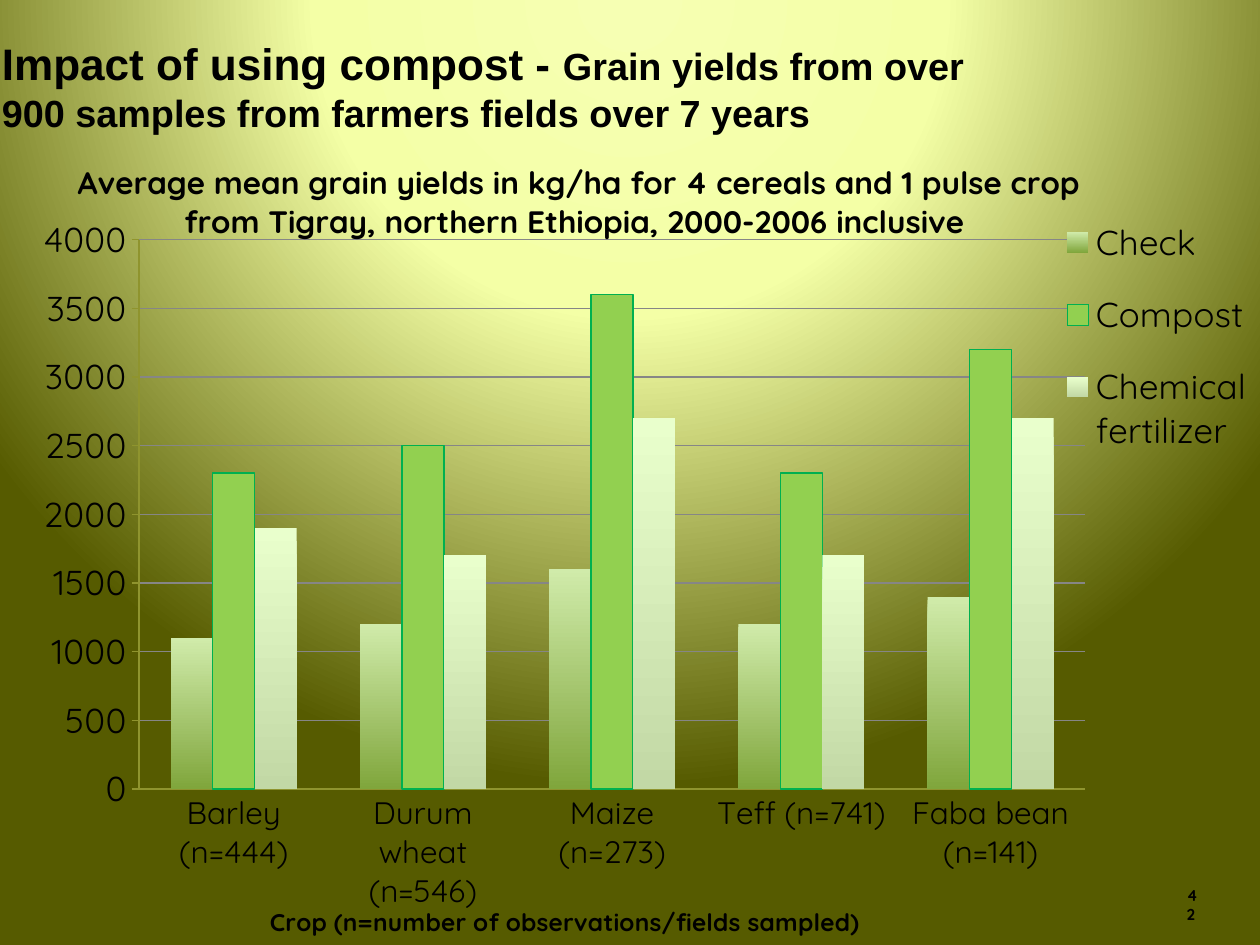
import pptx
import pptx.chart.data
import pptx.dml.color
import pptx.enum.chart
import pptx.enum.text
import pptx.oxml
import pptx.oxml.ns
import pptx.util

Pt = pptx.util.Pt


def color(value):
    return pptx.dml.color.RGBColor.from_string(value)


def write(para, text, size=18, font="Quicksand", bold=True):
    span = para.add_run()
    span.text = text
    span.font.size = Pt(size)
    span.font.name = font
    span.font.bold = bold
    span.font.color.rgb = color("000000")


deck = pptx.Presentation()
deck.slide_width, deck.slide_height = Pt(720), Pt(540)
page = deck.slides.add_slide(deck.slide_layouts[6])

page.background.fill.solid()
solid = page.background._cSld.find(".//" + pptx.oxml.ns.qn("a:solidFill"))
stops = "".join(
    f'<a:gs pos="{place * 1000}"><a:srgbClr val="{value}"/></a:gs>'
    for place, value in [(0, "F6FFB3"), (40, "F4FFA6"), (100, "565B00")]
)
gradient = pptx.oxml.parse_xml(
    f'<a:gradFill {pptx.oxml.ns.nsdecls("a")} rotWithShape="1"><a:gsLst>{stops}</a:gsLst>'
    '<a:path path="circle"><a:fillToRect l="50000" t="-80000" r="50000" b="180000"/></a:path>'
    "</a:gradFill>"
)
solid.getparent().replace(solid, gradient)

number_box = page.shapes.add_textbox(Pt(671), Pt(502.5), Pt(24), Pt(29))
number_box.text_frame.word_wrap = True
write(number_box.text_frame.paragraphs[0], "42", size=9)

title_box = page.shapes.add_textbox(Pt(-6), Pt(17.5), Pt(600), Pt(54))
title_box.text_frame.word_wrap = True
title_box.text_frame.vertical_anchor = pptx.enum.text.MSO_ANCHOR.TOP
para = title_box.text_frame.paragraphs[0]
write(para, "Impact of using compost - ", size=25.2, font="Arial")
write(para, "Grain yields from over 900 samples from farmers fields over 7 years", size=21.6, font="Arial")

yields = pptx.chart.data.CategoryChartData()
yields.categories = ["Barley (n=444)", "Durum wheat (n=546)", "Maize (n=273)", "Teff (n=741)", "Faba bean (n=141)"]
yields.add_series("Check", [1100, 1200, 1600, 1200, 1400])
yields.add_series("Compost", [2300, 2500, 3600, 2300, 3200])
yields.add_series("Chemical fertilizer", [1900, 1700, 2700, 1700, 2700])
chart = page.shapes.add_chart(
    pptx.enum.chart.XL_CHART_TYPE.COLUMN_CLUSTERED, Pt(-48), Pt(72), Pt(768), Pt(468), yields
).chart
chart.font.size = Pt(10)
chart.font.name = "Quicksand"
chart.font.color.rgb = color("000000")

chart.has_title = True
write(
    chart.chart_title.text_frame.paragraphs[0],
    "Average mean grain yields in kg/ha for 4 cereals and 1 pulse crop from Tigray, northern Ethiopia, 2000-2006 inclusive ",
)

crops, amounts = chart.category_axis, chart.value_axis
crops.has_title = True
write(crops.axis_title.text_frame.paragraphs[0], "Crop (n=number of observations/fields sampled)", size=14)
crops.major_tick_mark = pptx.enum.chart.XL_TICK_MARK.NONE
amounts.major_tick_mark = pptx.enum.chart.XL_TICK_MARK.OUTSIDE
amounts.minimum_scale, amounts.maximum_scale, amounts.major_unit = 0, 4000, 500
for axis, size in [(crops, 18), (amounts, 20)]:
    axis.tick_labels.font.size = Pt(size)
    axis.format.line.color.rgb = color("8F942E")
    axis.format.line.width = Pt(0.75)
amounts.has_major_gridlines = True
amounts.major_gridlines.format.line.color.rgb = color("868686")
amounts.major_gridlines.format.line.width = Pt(0.75)

chart.has_legend = True
chart.legend.position = pptx.enum.chart.XL_LEGEND_POSITION.RIGHT
chart.legend.include_in_layout = False
chart.legend.font.size = Pt(20)

plot = chart.plots[0]
plot.gap_width = 150
plot.overlap = 0
plot.vary_by_categories = False
check, compost, fertilizer = plot.series
for series, top, bottom in [(check, "D0EBAA", "80A63C"), (fertilizer, "E9FFCC", "C2D8A5")]:
    fill = series.format.fill
    fill.gradient()
    fill.gradient_angle = 270
    for stop, value in zip(fill.gradient_stops, [top, bottom]):
        stop.color.rgb = color(value)
compost.format.fill.solid()
compost.format.fill.fore_color.rgb = color("92D050")
compost.format.line.color.rgb = color("00B050")
compost.format.line.width = Pt(0.75)

layouts = [
    (chart.chart_title._element, {"x": 0.116, "y": 0.035}),
    (crops.axis_title._element, {"x": 0.26, "y": 0.96}),
    (chart.legend._element, {"x": 0.85, "y": 0.082, "w": 0.15, "h": 0.359}),
    (chart._chartSpace.chart.plotArea, {"x": 0.166, "y": 0.141, "w": 0.704, "h": 0.682}),
]
for element, places in layouts:
    target = '<c:layoutTarget val="inner"/>' if element.tag.endswith("plotArea") else ""
    modes = "".join(f'<c:{key}Mode val="edge"/>' for key in "xy")
    values = "".join(f'<c:{key} val="{value}"/>' for key, value in places.items())
    layout = pptx.oxml.parse_xml(
        f'<c:layout {pptx.oxml.ns.nsdecls("c")}><c:manualLayout>{target}{modes}{values}</c:manualLayout></c:layout>'
    )
    for old in element.findall(pptx.oxml.ns.qn("c:layout")):
        element.remove(old)
    before = [child for child in element if child.tag.endswith(("}tx", "}legendPos"))]
    element.insert(len(before), layout)

deck.save("out.pptx")
